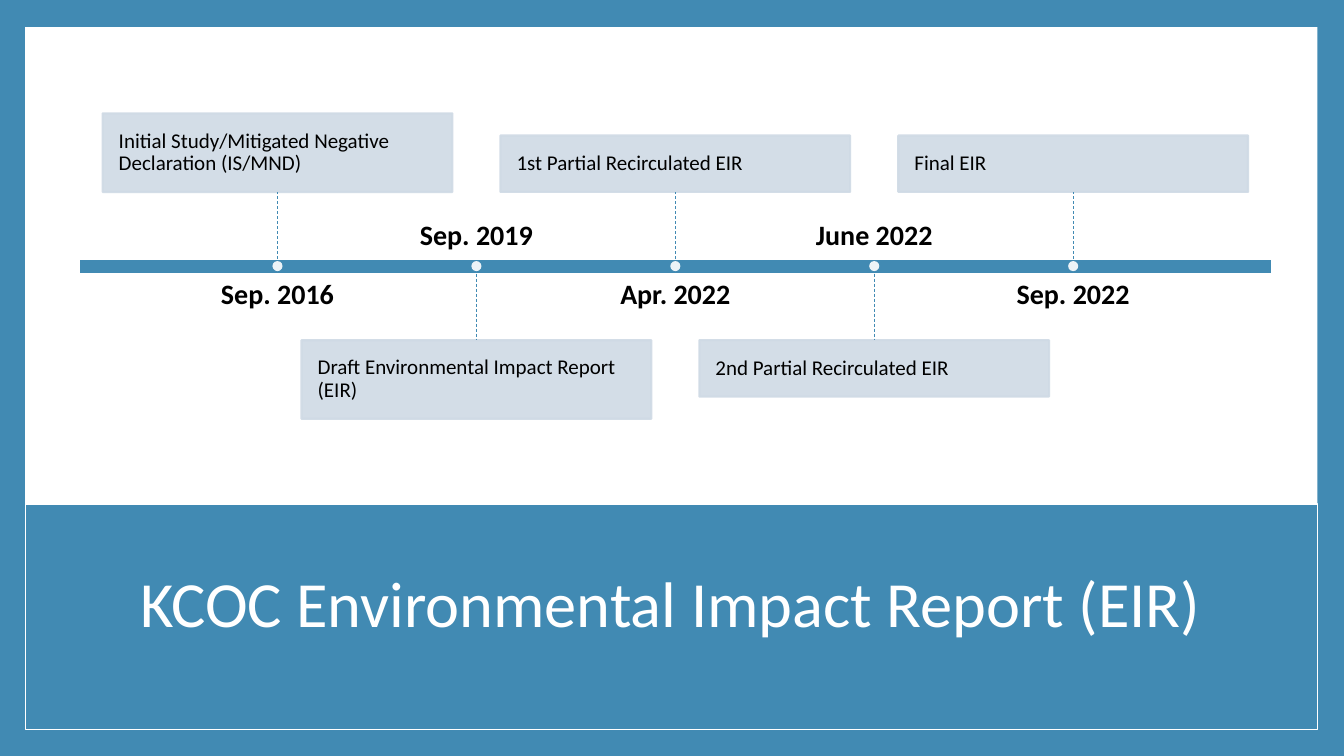
import dataclasses

import lxml.etree
import pptx
import pptx.dml.color
import pptx.enum.dml
import pptx.enum.shapes
import pptx.enum.text
import pptx.oxml.ns
import pptx.util

SHAPE = pptx.enum.shapes.MSO_SHAPE
ALIGN = pptx.enum.text.PP_ALIGN
ANCHOR = pptx.enum.text.MSO_ANCHOR

# The page is a grid of square cells, ten to the inch.
CELL = pptx.util.Inches(0.1)
COLUMNS, ROWS = 133.33, 75

BAR_LEFT, BAR_WIDTH, BAR_HEIGHT = 7.8, 118.4, 1.5
AXIS = 26.4
DATE_GAP, DATE_WIDTH, DATE_HEIGHT = 1.4, 31.5, 4.4
LABEL_GAP, LABEL_WIDTH = 7.35, 34.7
LABEL_HEIGHTS = {1: 5.6, 2: 7.8}
DOT = 1

# Date, label, number of label lines
EVENTS = [
    ("Sep. 2016", "Initial Study/Mitigated Negative Declaration (IS/MND)", 2),
    ("Sep. 2019", "Draft Environmental Impact Report (EIR)", 2),
    ("Apr. 2022", "1st Partial Recirculated EIR", 1),
    ("June 2022", "2nd Partial Recirculated EIR", 1),
    ("Sep. 2022", "Final EIR", 1),
]


@dataclasses.dataclass(frozen=True)
class Theme:
    font: str = "Calibri"
    blue: str = "418AB3"
    pale: str = "CFDAE5"
    white: str = "FFFFFF"
    black: str = "000000"
    title_size: float = 46
    date_size: float = 20
    label_size: float = 15


THEME = Theme()


def rgb(color):
    return pptx.dml.color.RGBColor.from_string(color)


def cells(*counts):
    return [round(count * CELL) for count in counts]


def set_values(target, values):
    for name, value in values.items():
        setattr(target, name, value)


def set_opacity(element, percent):
    """Make every solid colour in the shape's properties partly transparent."""
    for color in element.spPr.iter(pptx.oxml.ns.qn("a:srgbClr")):
        alpha = lxml.etree.SubElement(color, pptx.oxml.ns.qn("a:alpha"))
        alpha.set("val", str(percent * 1000))


def add_block(page, area, fill, line=None, weight=1, kind=SHAPE.RECTANGLE, opacity=100):
    block = page.shapes.add_shape(kind, *cells(*area))
    block.shadow.inherit = False
    block.fill.solid()
    block.fill.fore_color.rgb = rgb(fill)
    if line:
        block.line.color.rgb = rgb(line)
        block.line.width = pptx.util.Pt(weight)
    else:
        block.line.fill.background()
    if opacity < 100:
        set_opacity(block.element, opacity)
    return block


def write(box, text, size, color, align, anchor, inset, bold=False):
    frame = box.text_frame
    margin, = cells(inset)
    set_values(frame, {
        "word_wrap": True, "vertical_anchor": anchor,
        "margin_left": margin, "margin_right": margin,
        "margin_top": margin, "margin_bottom": margin,
    })
    para = frame.paragraphs[0]
    set_values(para, {"alignment": align, "line_spacing": 0.9})
    span = para.add_run()
    span.text = text
    set_values(span.font, {"name": THEME.font, "size": pptx.util.Pt(size), "bold": bold})
    span.font.color.rgb = rgb(color)


def add_dashed_line(page, x, start, end):
    line = page.shapes.add_connector(
        pptx.enum.shapes.MSO_CONNECTOR.STRAIGHT, *cells(x, start, x, end))
    line.line.color.rgb = rgb(THEME.blue)
    set_values(line.line, {
        "width": pptx.util.Pt(0.5),
        "dash_style": pptx.enum.dml.MSO_LINE.DASH,
    })
    lxml.etree.SubElement(line.element.spPr, pptx.oxml.ns.qn("a:effectLst"))


def offset_top(side, gap, height):
    """Top of an item that clears the axis by gap, above (-1) or below (1)."""
    return AXIS + gap if side > 0 else AXIS - gap - height


def add_event(page, x, side, date, label, line_count):
    """Put the label on the given side of the axis and the date on the other."""
    date_top = offset_top(-side, DATE_GAP, DATE_HEIGHT)
    date_box = page.shapes.add_textbox(
        *cells(x - DATE_WIDTH / 2, date_top, DATE_WIDTH, DATE_HEIGHT))
    anchor = ANCHOR.BOTTOM if side > 0 else ANCHOR.TOP
    write(date_box, date, THEME.date_size, THEME.black, ALIGN.CENTER, anchor, 0, bold=True)

    height = LABEL_HEIGHTS[line_count]
    area = (x - LABEL_WIDTH / 2, offset_top(side, LABEL_GAP, height), LABEL_WIDTH, height)
    label_box = add_block(page, area, THEME.pale, THEME.pale, 1.5, opacity=90)
    write(label_box, label, THEME.label_size, THEME.black, ALIGN.LEFT, ANCHOR.MIDDLE, 1.6)

    add_dashed_line(page, x, AXIS + side * BAR_HEIGHT / 2, AXIS + side * LABEL_GAP)
    add_block(page, (x - DOT / 2, AXIS - DOT / 2, DOT, DOT), THEME.white,
              kind=SHAPE.OVAL, opacity=90)


def add_frame(page):
    add_block(page, (0, 0, COLUMNS, ROWS), THEME.blue)
    add_block(page, (2.5, 2.7, 128.2, 69.7), THEME.white)
    add_block(page, (2.5, 50, 128.2, 22.4), THEME.blue, THEME.white)


def add_title(page, text):
    box = page.shapes.add_textbox(*cells(12.5, 52.8, 108, 14.8))
    write(box, text, THEME.title_size, THEME.white, ALIGN.CENTER, ANCHOR.MIDDLE, 0.5)


def add_timeline(page):
    bar = (BAR_LEFT, AXIS - BAR_HEIGHT / 2, BAR_WIDTH, BAR_HEIGHT)
    add_block(page, bar, THEME.blue, THEME.white, 1.5)
    step = BAR_WIDTH / (len(EVENTS) + 1)
    for number, event in enumerate(EVENTS, start=1):
        side = -1 if number % 2 else 1
        add_event(page, BAR_LEFT + number * step, side, *event)


def main():
    deck = pptx.Presentation()
    deck.slide_width, deck.slide_height = cells(COLUMNS, ROWS)
    page = deck.slides.add_slide(deck.slide_layouts[6])
    add_frame(page)
    add_title(page, "KCOC Environmental Impact Report (EIR)")
    add_timeline(page)
    deck.save("out.pptx")


if __name__ == "__main__":
    main()
